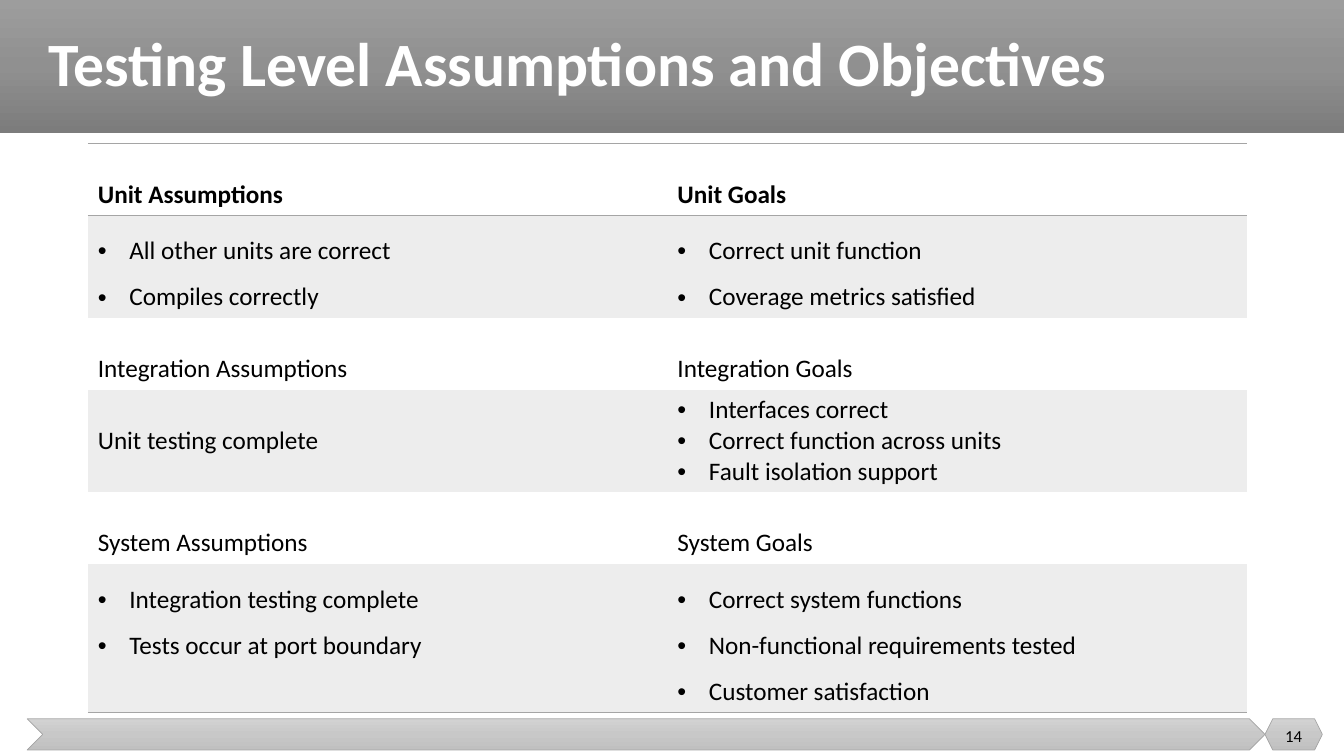
"""Build the slide on testing level assumptions and objectives."""
from copy import deepcopy

from lxml import etree
from pptx import Presentation
from pptx import util as u
from pptx.dml import color
from pptx.enum import shapes, text
from pptx.oxml import ns

Pt = u.Pt
INDENT = 22.5


def rgb(value):
    """Turn a hex string into a colour."""
    return color.RGBColor.from_string(value)


def write(p, content, size=18, bold=False, hue="000000", spacing=1.0,
          align=text.PP_ALIGN.LEFT, bullet=False):
    """Write formatted text into a paragraph."""
    p.line_spacing = spacing
    p.alignment = align
    r = p.add_run()
    r.text = content
    r.font.name = "Calibri"
    r.font.size = Pt(size)
    r.font.bold = bold
    r.font.color.rgb = rgb(hue)
    if bullet:
        pPr = p._p.get_or_add_pPr()
        pPr.set("marL", str(Pt(INDENT)))
        pPr.set("indent", str(-Pt(INDENT)))
        etree.SubElement(pPr, ns.qn("a:buFont"), typeface="Arial")
        etree.SubElement(pPr, ns.qn("a:buChar"), char="•")


class Deck:
    """Hold the style and the current slide."""

    rule = "A5A5A5"
    band = "EDEDED"
    header = ("9D9D9D", "909090", "7C7C7C")
    footer = ("D2D2D2", "C8C8C8", "C0C0C0")

    def __init__(self, prs):
        """Add a blank slide to the presentation."""
        self.s = prs.slides.add_slide(prs.slide_layouts[6])

    def shape(self, kind, box, hues, outlined=True):
        """Add a shape with an even vertical gradient."""
        sp = self.s.shapes.add_shape(kind, *map(Pt, box))
        sp.shadow.inherit = False
        sp.fill.gradient()
        sp.fill.gradient_angle = 270
        stops = sp._element.spPr.find(".//" + ns.qn("a:gsLst"))
        stops.append(deepcopy(stops[-1]))
        for i, (stop, hue) in enumerate(zip(sp.fill.gradient_stops, hues)):
            stop.position = i / 2
            stop.color.rgb = rgb(hue)
        if outlined:
            sp.line.color.rgb = rgb(self.rule)
            sp.line.width = Pt(0.5)
        else:
            sp.line.fill.background()

    def label(self, box, content, **style):
        """Add a vertically centred text box."""
        tf = self.s.shapes.add_textbox(*map(Pt, box)).text_frame
        tf.word_wrap = True
        tf.vertical_anchor = text.MSO_ANCHOR.MIDDLE
        write(tf.paragraphs[0], content, **style)

    def borders(self, cell, ruled):
        """Rule the named sides of a cell and clear the others."""
        tcPr = cell._tc.get_or_add_tcPr()
        for i, side in enumerate("LRTB"):
            ln = etree.Element(ns.qn("a:ln" + side), w=str(Pt(1)))
            if side in ruled:
                fill = etree.SubElement(ln, ns.qn("a:solidFill"))
                etree.SubElement(fill, ns.qn("a:srgbClr"), val=self.rule)
            else:
                etree.SubElement(ln, ns.qn("a:noFill"))
            tcPr.insert(i, ln)

    def table(self, box, heights, rows):
        """Add a table with headings on plain rows and details on banded rows."""
        t = self.s.shapes.add_table(len(rows), 2, *map(Pt, box)).table
        t.first_row = t.horz_banding = False
        ruled = {0: "TB", 1: "T", len(rows) - 1: "B"}
        for i, (height, row) in enumerate(zip(heights, rows)):
            t.rows[i].height = Pt(height)
            for j, (spacing, lines) in enumerate(row):
                cell = t.cell(i, j)
                if i % 2:
                    cell.fill.solid()
                    cell.fill.fore_color.rgb = rgb(self.band)
                else:
                    cell.fill.background()
                self.borders(cell, ruled.get(i, ""))
                tf = cell.text_frame
                for k, line in enumerate(lines):
                    p = tf.add_paragraph() if k else tf.paragraphs[0]
                    write(p, line, bold=i == 0, spacing=spacing, bullet=spacing < 2)


def heading(level):
    """Return the pair of heading cells for a testing level."""
    return [(2.0, [f"{level} {part}"]) for part in ("Assumptions", "Goals")]


def main():
    """Build and save the slide."""
    prs = Presentation()
    prs.slide_width, prs.slide_height = Pt(960), Pt(540)
    deck = Deck(prs)
    kinds = shapes.MSO_SHAPE
    deck.shape(kinds.RECTANGLE, (0, 0, 960, 95), deck.header, outlined=False)
    deck.shape(kinds.CHEVRON, (19.4, 513.4, 884.2, 22.3), deck.footer)
    deck.shape(kinds.HEXAGON, (903.6, 513.4, 41, 22.3), deck.footer)
    deck.label((27.4, 0, 917.3, 95), "Testing Level Assumptions and Objectives",
               size=44, bold=True, hue="FFFFFF", spacing=0.9)
    deck.table((62.7, 102.7, 828, 406), (51.2, 73.2, 51.2, 73.2, 51.2, 106), [
        heading("Unit"),
        [(1.5, ["All other units are correct", "Compiles correctly"]),
         (1.5, ["Correct unit function", "Coverage metrics satisfied"])],
        heading("Integration"),
        [(2.0, ["Unit testing complete"]),
         (1.0, ["Interfaces correct", "Correct function across units",
                "Fault isolation support"])],
        heading("System"),
        [(1.5, ["Integration testing complete", "Tests occur at port boundary"]),
         (1.5, ["Correct system functions", "Non-functional requirements tested",
                "Customer satisfaction"])],
    ])
    deck.label((903.6, 511.2, 41, 28.8), "14", size=12, align=text.PP_ALIGN.CENTER)
    prs.save("out.pptx")


if __name__ == "__main__":
    main()
